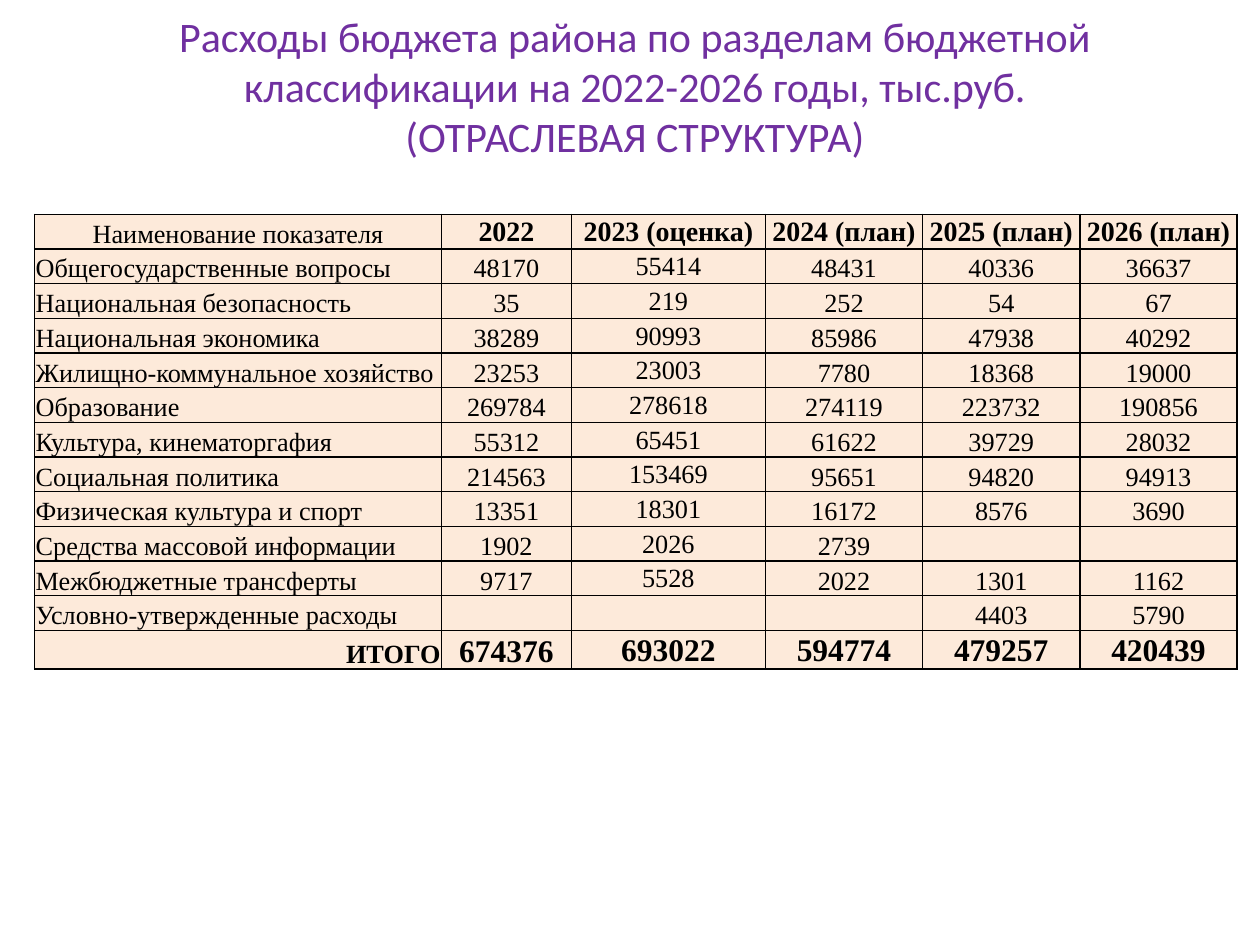
import pptx
import pptx.dml.color
import pptx.enum.text
import pptx.oxml.ns
import pptx.util
from lxml import etree

Cm = pptx.util.Cm
Pt = pptx.util.Pt
ALIGN = pptx.enum.text.PP_ALIGN
ANCHOR = pptx.enum.text.MSO_ANCHOR
qn = pptx.oxml.ns.qn

COLORS = {"title": "7030A0", "text": "000000", "border": "000000",
          "cell": "FDEADA", "background": "FFFFFF"}
TITLE_LINES = [
    "Расходы бюджета района по разделам бюджетной классификации на 2022-2026 годы, тыс.руб.",
    "(ОТРАСЛЕВАЯ СТРУКТУРА)",
]
BODY_SIZE = 15
HEADER_SIZE = 16
TOTAL_SIZE = 18
ROW_HEIGHT = 0.7
COLUMN_WIDTHS = [8.2, 2.62, 3.91, 3.17, 3.17, 3.17]
ESTIMATE_COLUMN = 2
ROWS = [
    ["Наименование показателя", "2022", "2023 (оценка)", "2024 (план)", "2025 (план)", "2026 (план)"],
    ["Общегосударственные вопросы", "48170", "55414", "48431", "40336", "36637"],
    ["Национальная безопасность", "35", "219", "252", "54", "67"],
    ["Национальная экономика", "38289", "90993", "85986", "47938", "40292"],
    ["Жилищно-коммунальное хозяйство", "23253", "23003", "7780", "18368", "19000"],
    ["Образование", "269784", "278618", "274119", "223732", "190856"],
    ["Культура, кинематоргафия", "55312", "65451", "61622", "39729", "28032"],
    ["Социальная политика", "214563", "153469", "95651", "94820", "94913"],
    ["Физическая культура и спорт", "13351", "18301", "16172", "8576", "3690"],
    ["Средства массовой информации", "1902", "2026", "2739", "", ""],
    ["Межбюджетные трансферты", "9717", "5528", "2022", "1301", "1162"],
    ["Условно-утвержденные расходы", "", "", "", "4403", "5790"],
    ["ИТОГО", "674376", "693022", "594774", "479257", "420439"],
]


def rgb(name):
    return pptx.dml.color.RGBColor.from_string(COLORS[name])


def add_run(paragraph, text, font_name, size, color, bold=False):
    run = paragraph.add_run()
    run.text = text
    run.font.name = font_name
    run.font.size = Pt(size)
    run.font.bold = bold
    run.font.color.rgb = rgb(color)


def add_title(slide, left, top, width, height):
    shape = slide.shapes.add_textbox(Cm(left), Cm(top), Cm(width), Cm(height))
    shape.fill.solid()
    shape.fill.fore_color.rgb = rgb("background")
    frame = shape.text_frame
    frame.word_wrap = True
    frame.vertical_anchor = ANCHOR.MIDDLE
    paragraph = frame.paragraphs[0]
    paragraph.alignment = ALIGN.CENTER
    for index, line in enumerate(TITLE_LINES):
        if index:
            paragraph.add_line_break()
        add_run(paragraph, line, "Calibri", 24, "title")


def set_borders(cell):
    properties = cell._tc.get_or_add_tcPr()
    for position, side in enumerate(("a:lnL", "a:lnR", "a:lnT", "a:lnB")):
        line = etree.Element(qn(side), w=str(Pt(1)))
        fill = etree.SubElement(line, qn("a:solidFill"))
        etree.SubElement(fill, qn("a:srgbClr"), val=COLORS["border"])
        properties.insert(position, line)


def cell_style(row, column):
    """Return alignment, anchor, size and weight for a cell."""
    is_header, is_total = row == 0, row == len(ROWS) - 1
    if column == 0:
        alignment = ALIGN.CENTER if is_header else ALIGN.RIGHT if is_total else ALIGN.LEFT
        return alignment, ANCHOR.BOTTOM, BODY_SIZE, is_total
    size = HEADER_SIZE if is_header else TOTAL_SIZE if is_total else BODY_SIZE
    in_middle = is_header or column == ESTIMATE_COLUMN or (is_total and column > 1)
    anchor = ANCHOR.MIDDLE if in_middle else ANCHOR.BOTTOM
    return ALIGN.CENTER, anchor, size, is_header or is_total


def fill_cell(cell, text, alignment, anchor, size, bold):
    cell.fill.solid()
    cell.fill.fore_color.rgb = rgb("cell")
    cell.margin_left = cell.margin_right = cell.margin_top = Cm(0.02)
    cell.margin_bottom = 0
    cell.vertical_anchor = anchor
    set_borders(cell)
    paragraph = cell.text_frame.paragraphs[0]
    paragraph.alignment = alignment
    if text:
        add_run(paragraph, text, "Times New Roman", size, "text", bold)
    else:
        # Keep an empty cell from stretching its row
        etree.SubElement(paragraph._p, qn("a:endParaRPr"), sz=str(size * 100))


def add_budget_table(slide, left, top):
    table = slide.shapes.add_table(
        len(ROWS), len(COLUMN_WIDTHS), Cm(left), Cm(top),
        Cm(sum(COLUMN_WIDTHS)), Cm(ROW_HEIGHT * len(ROWS))).table
    table.horz_banding = False
    for column, width in zip(table.columns, COLUMN_WIDTHS):
        column.width = Cm(width)
    for row_index, values in enumerate(ROWS):
        table.rows[row_index].height = Cm(ROW_HEIGHT)
        for column_index, text in enumerate(values):
            fill_cell(table.cell(row_index, column_index), text,
                      *cell_style(row_index, column_index))


def main():
    presentation = pptx.Presentation()
    presentation.slide_width = Cm(25.4)
    presentation.slide_height = Cm(19.05)
    slide = presentation.slides.add_slide(presentation.slide_layouts[6])
    # Heading
    add_title(slide, 0.7, 0.33, 24.2, 2.8)
    # Spending by section and year
    add_budget_table(slide, 0.7, 4.32)
    presentation.save("out.pptx")


if __name__ == "__main__":
    main()
